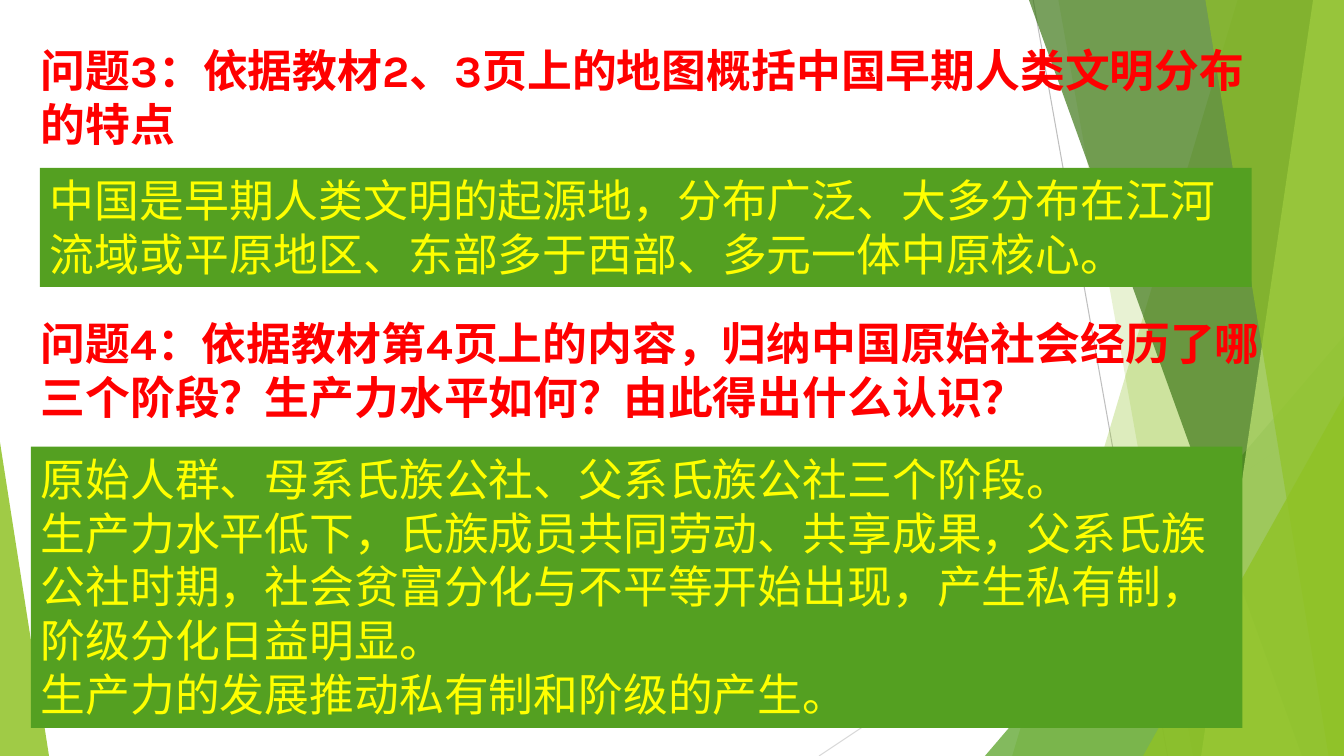
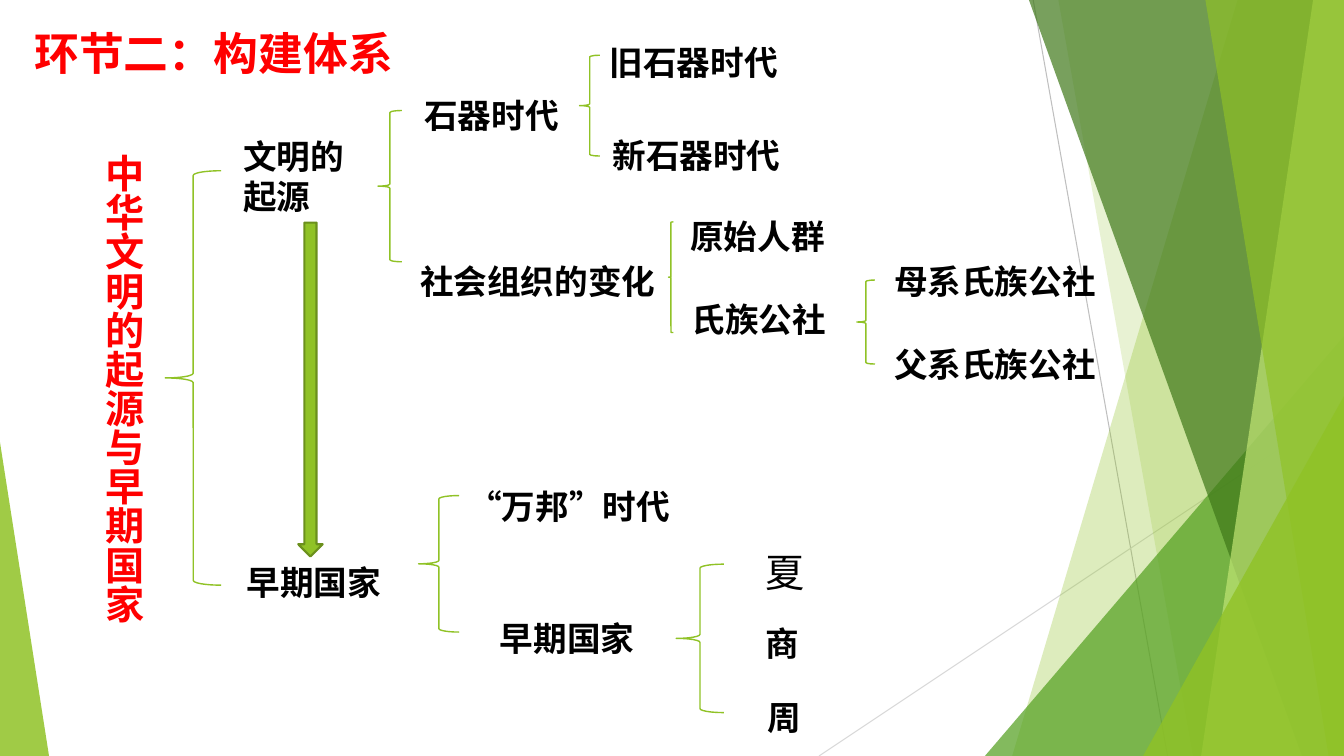
from lxml import etree
from pptx import Presentation
from pptx.dml.color import RGBColor
from pptx.enum import lang, shapes, text
from pptx.oxml.ns import qn
from pptx.util import Pt

WIDTH, HEIGHT = 960, 540
FONT = "Karla"
LIME, GREEN, FOREST, PALE = "90C226", "54A021", "3F7819", "C0E474"
ARROW_EDGE = "6B901C"
RED, YELLOW, BLACK = "FF0000", "FFFF00", "000000"
TITLE_SIZE, LABEL_SIZE = 32, 24
LABEL_HEIGHT = 36

QUESTIONS = [  # text, top
    ("问题3：依据教材2、3页上的地图概括中国早期人类文明分布的特点", 27),
    ("问题4：依据教材第4页上的内容，归纳中国原始社会经历了哪三个阶段？"
     "生产力水平如何？由此得出什么认识？", 222),
]
ANSWERS = [  # paragraphs, left, top, height
    (["中国是早期人类文明的起源地，分布广泛、大多分布在江河流域或平原地区、"
      "东部多于西部、多元一体中原核心。"], 28.5, 120, 85),
    (["原始人群、母系氏族公社、父系氏族公社三个阶段。",
      "生产力水平低下，氏族成员共同劳动、共享成果，父系氏族公社时期，"
      "社会贫富分化与不平等开始出现，产生私有制，阶级分化日益明显。",
      "生产力的发展推动私有制和阶级的产生。"], 22, 319, 201),
]
LABELS = [  # text, left, top, width
    ("文明的起源", 166.5, 93.5, 93),
    ("早期国家", 169, 397.5, 118),
    ("石器时代", 296, 64.5, 133),
    ("社会组织的变化", 293, 182.5, 184),
    ("旧石器时代", 428.5, 26.5, 139),
    ("新石器时代", 430.5, 92.5, 139),
    ("原始人群", 486, 150.5, 139),
    ("氏族公社", 487, 210, 120),
    ("母系氏族公社", 631.5, 182.5, 168),
    ("父系氏族公社", 631.5, 242, 168),
    ("“万邦”时代", 327.5, 343.5, 162),
    ("早期国家", 350, 437.5, 127),
    ("商", 539.5, 441.5, 65),
    ("周", 541, 494.5, 65),
]
BRACES = [  # left, top, width, height
    (118, 122, 40, 296),
    (270, 79, 17, 108),
    (414, 39.5, 14.5, 72),
    (477.5, 158.5, 3.5, 79),
    (612, 200, 13, 60),
    (299, 354, 29, 97.5),
    (483, 403, 34, 106),
]


def color(value):
    return RGBColor.from_string(value)


def box(left, top, width, height):
    return Pt(left), Pt(top), Pt(width), Pt(height)


def paint(shape, fill=None, opacity=100, line=None, weight=1):
    shape.shadow.inherit = False
    if fill:
        shape.fill.solid()
        shape.fill.fore_color.rgb = color(fill)
        if opacity < 100:
            tint = shape.element.spPr.find(qn("a:solidFill"))[0]
            etree.SubElement(tint, qn("a:alpha")).set("val", str(opacity * 1000))
    else:
        shape.fill.background()
    if line:
        shape.line.color.rgb = color(line)
        shape.line.width = Pt(weight)
    else:
        shape.line.fill.background()


def write(shape, lines, size, font_color, bold=False):
    frame = shape.text_frame
    frame.word_wrap = True
    frame.auto_size = text.MSO_AUTO_SIZE.SHAPE_TO_FIT_TEXT
    frame.vertical_anchor = text.MSO_ANCHOR.TOP
    frame.text = "\n".join(lines)
    for paragraph in frame.paragraphs:
        paragraph.alignment = text.PP_ALIGN.LEFT
        font = paragraph.font
        font.name, font.size, font.bold = FONT, Pt(size), bold
        font.color.rgb = color(font_color)
        font.language_id = lang.MSO_LANGUAGE_ID.SIMPLIFIED_CHINESE


def add_label(slide, words, bounds, size=LABEL_SIZE, font_color=BLACK, bold=True):
    label = slide.shapes.add_textbox(*box(*bounds))
    write(label, [words], size, font_color, bold)
    return label


def add_answer(slide, lines, left, top, height):
    answer = slide.shapes.add_shape(
        shapes.MSO_SHAPE.RECTANGLE, *box(left, top, 865.5, height))
    paint(answer, GREEN)
    write(answer, lines, TITLE_SIZE, YELLOW)


def add_brace(slide, *bounds):
    brace = slide.shapes.add_shape(shapes.MSO_SHAPE.LEFT_BRACE, *box(*bounds))
    paint(brace, line=LIME)


def add_thin_line(slide, start, end, line_color):
    line = slide.shapes.add_connector(
        shapes.MSO_CONNECTOR.STRAIGHT, *map(Pt, start + end))
    line.line.color.rgb = color(line_color)
    line.line.width = Pt(0.75)
    etree.SubElement(line.element.spPr, qn("a:effectLst"))


def add_panel(slide, top_x, bottom_x, fill, opacity):
    """Full-height panel from a slanted left edge to the slide's right edge."""
    builder = slide.shapes.build_freeform(Pt(top_x), 0)
    builder.add_line_segments(
        [(Pt(WIDTH), 0), (Pt(WIDTH), Pt(HEIGHT)), (Pt(bottom_x), Pt(HEIGHT))])
    paint(builder.convert_to_shape(), fill, opacity)


def add_corner(slide, left, top, width, apex, fill, opacity):
    """Triangle on the slide's bottom edge; apex runs from 0 (left) to 1 (right)."""
    corner = slide.shapes.add_shape(
        shapes.MSO_SHAPE.ISOSCELES_TRIANGLE, *box(left, top, width, HEIGHT - top))
    corner.adjustments[0] = apex
    paint(corner, fill, opacity)


def decorate(slide):
    """Draw the facets and move them to the layout, so every slide shows them."""
    add_thin_line(slide, (738, 0), (834, HEIGHT), "BFBFBF")
    add_thin_line(slide, (WIDTH, 290), (585, HEIGHT), "D9D9D9")
    add_panel(slide, 884, 723, LIME, 30)
    add_panel(slide, 756, 852, LIME, 20)
    add_corner(slide, 703.5, 240, 256.5, 1, GREEN, 72)
    add_panel(slide, 735, 930, FOREST, 70)
    add_panel(slide, 938, 858, PALE, 70)
    add_panel(slide, 861, 949, LIME, 65)
    add_corner(slide, 816.5, 283, 143.5, 1, LIME, 80)
    add_corner(slide, 0, 316, 35, 0, LIME, 85)

    layout = slide.slide_layout
    for placeholder in list(layout.placeholders):
        layout.shapes.element.remove(placeholder.element)
    for shape in list(slide.shapes):
        layout.shapes.element.append(shape.element)


def fill_questions(slide):
    for (question, top), answer in zip(QUESTIONS, ANSWERS):
        add_label(slide, question, (22, top, 896.5, 85), TITLE_SIZE, RED)
        add_answer(slide, *answer)


def fill_structure(slide):
    add_label(slide, "环节二：构建体系", (17.5, 14.5, 349, 46), TITLE_SIZE, RED)
    topic = add_label(slide, "中华文明的起源与早期国家", (60.5, 103, 48, 375), 28, RED)
    topic.text_frame._txBody.bodyPr.set("vert", "eaVert")
    for bounds in BRACES:
        add_brace(slide, *bounds)
    for words, left, top, width in LABELS:
        add_label(slide, words, (left, top, width, LABEL_HEIGHT))
    add_label(slide, "夏", (539.5, 388, 65, 41), 28, bold=False)
    arrow = slide.shapes.add_shape(
        shapes.MSO_SHAPE.DOWN_ARROW, *box(213, 159, 17.5, 238.5))
    paint(arrow, LIME, line=ARROW_EDGE, weight=1.5)


def main():
    presentation = Presentation()
    presentation.slide_width, presentation.slide_height = Pt(WIDTH), Pt(HEIGHT)
    blank = presentation.slide_layouts[6]
    questions = presentation.slides.add_slide(blank)
    decorate(questions)
    fill_questions(questions)
    fill_structure(presentation.slides.add_slide(blank))
    presentation.save("out.pptx")


if __name__ == "__main__":
    main()
